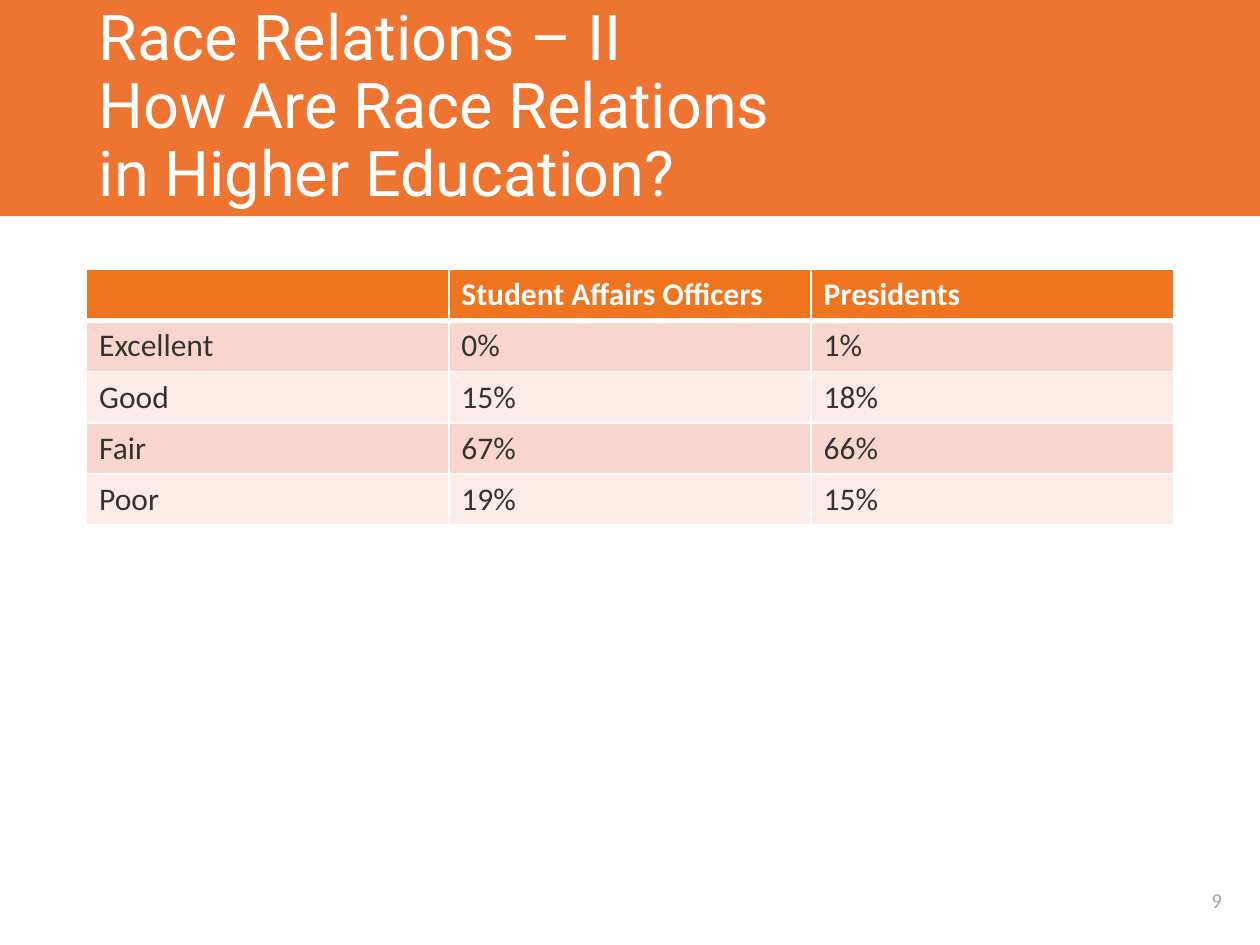
from dataclasses import dataclass

from lxml.etree import SubElement
from pptx import Presentation
from pptx.dml.color import RGBColor as RGB
from pptx.enum.shapes import MSO_SHAPE as Shape
from pptx.enum.text import MSO_ANCHOR as Anchor, PP_ALIGN as Align
from pptx.oxml.ns import qn
from pptx.util import Pt


@dataclass(frozen=True)
class Theme:
    band: str = "EE7531"
    head: str = "EF7521"
    rows: tuple = ("F9D6CD", "FCECE8")
    white: str = "FFFFFF"
    ink: str = "333333"
    gray: str = "A6A6A6"
    display: str = "Roboto"
    body: str = "Calibri"
    title: int = 36
    cell: int = 18
    page: int = 12


THEME = Theme()
ROWS = [
    ("", "Student Affairs Officers", "Presidents"),
    ("Excellent", "0%", "1%"),
    ("Good", "15%", "18%"),
    ("Fair", "67%", "66%"),
    ("Poor", "19%", "15%"),
]


def style(par, name, size, color, bold=False):
    font = par.font
    font.name, font.size, font.bold = name, Pt(size), bold
    font.color.rgb = RGB.from_string(color)


def add_text(slide, box, text):
    """Add a wrapped, vertically centred text box; return its paragraph."""
    frame = slide.shapes.add_textbox(*map(Pt, box)).text_frame
    frame.word_wrap = True
    frame.vertical_anchor = Anchor.MIDDLE
    par = frame.paragraphs[0]
    par.text = text
    return par


def add_header(slide, box, inset, text):
    x, y, w, h = box
    band = slide.shapes.add_shape(Shape.RECTANGLE, *map(Pt, box))
    band.shadow.inherit = False
    band.fill.solid()
    band.fill.fore_color.rgb = RGB.from_string(THEME.band)
    band.line.fill.background()
    par = add_text(slide, (x + inset, y, w - 2 * inset, h), text)
    par.line_spacing = 0.9
    style(par, THEME.display, THEME.title, THEME.white)


def add_edge(cell, side, width):
    line = SubElement(cell._tc.get_or_add_tcPr(), qn(f"a:ln{side}"), w=str(Pt(width)))
    fill = SubElement(line, qn("a:solidFill"))
    SubElement(fill, qn("a:srgbClr"), val=THEME.white)


def fill_cell(cell, row, text):
    """Style one cell; a thick rule separates row 0 from row 1."""
    head = row == 0
    widths = {"L": 1, "R": 1, "T": 3 if row == 1 else 1, "B": 3 if head else 1}
    for side, width in widths.items():
        add_edge(cell, side, width)
    cell.fill.solid()
    color = THEME.head if head else THEME.rows[(row - 1) % 2]
    cell.fill.fore_color.rgb = RGB.from_string(color)
    par = cell.text_frame.paragraphs[0]
    par.text = text
    style(par, THEME.body, THEME.cell, THEME.white if head else THEME.ink, head)


def add_grid(slide, box, rows):
    x, y, w, h = box
    cols = len(rows[0])
    table = slide.shapes.add_table(len(rows), cols, *map(Pt, box)).table
    for col in table.columns:
        col.width = Pt(w / cols)
    for r, texts in enumerate(rows):
        table.rows[r].height = Pt(h / len(rows))
        for c, text in enumerate(texts):
            fill_cell(table.cell(r, c), r, text)


def add_page(slide, box, number):
    par = add_text(slide, box, str(number))
    par.alignment = Align.CENTER
    style(par, THEME.body, THEME.page, THEME.gray)


def main():
    deck = Presentation()
    deck.slide_width, deck.slide_height = Pt(720), Pt(540)
    slide = deck.slides.add_slide(deck.slide_layouts[6])
    add_header(slide, (-0.5, 0, 721, 123.5), 50,
               "Race Relations – II\nHow Are Race Relations\nin Higher Education?")
    add_grid(slide, (49.5, 154, 621, 146), ROWS)
    add_page(slide, (670.5, 500.5, 49.5, 28), 9)
    deck.save("out.pptx")


if __name__ == "__main__":
    main()
